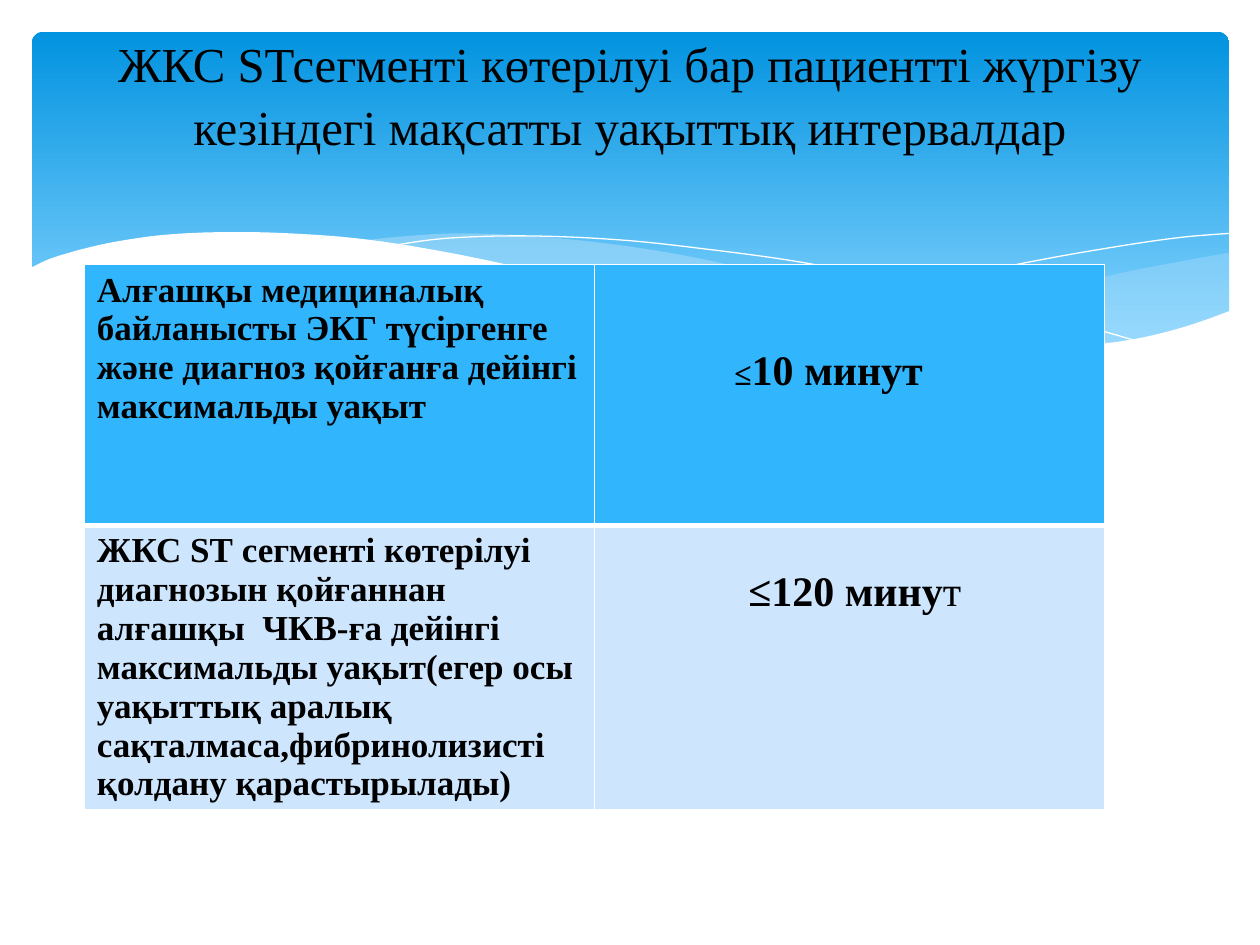
from lxml.etree import SubElement
from pptx import Presentation
from pptx.dml.color import RGBColor
from pptx.enum.shapes import MSO_SHAPE as Shape
from pptx.enum.text import MSO_ANCHOR as Anchor, PP_ALIGN as Align
from pptx.oxml.ns import qn
from pptx.util import Cm, Pt

COLORS = {"deep": "0293E0", "light": "83D3FE", "wave": "C6E7FC", "white": "FFFFFF",
          "text": "000000", "head": "31B6FD", "body": "CEE5FE"}
FONT = "Times New Roman"

WAVES = [
    (29, [[(9.51, 1.75), (8.81, 1.88), (8.36, 1.98), (7.54, 2.17), (7.04, 2.28), (6.36, 2.4)],
          [(6.36, 2.4), (7.07, 2.49), (7.67, 2.52), (8.19, 2.52), (8.64, 2.47), (9.03, 2.38),
           (9.51, 2.22)]]),
    (40, [[(8.68, 2.48), (7.82, 2.35), (6.81, 2.15), (6.04, 1.97), (5.3, 1.8), (4.64, 1.69),
           (3.95, 1.62), (3.36, 1.6), (2.88, 1.63), (2.61, 1.66)],
          [(2.61, 1.66), (3.37, 1.78), (4.24, 1.97), (5.05, 2.15), (5.76, 2.3), (6.4, 2.41),
           (6.97, 2.49), (7.48, 2.52), (8.03, 2.53), (8.42, 2.51), (8.68, 2.48)]]),
]
STRANDS = [
    [(2.84, 1.7), (3.28, 1.64), (3.91, 1.62), (4.64, 1.65), (5.31, 1.72), (6.11, 1.83),
     (7.02, 2.01), (7.7, 2.16), (8.44, 2.36), (8.82, 2.47)],
    [(5.88, 2.32), (6.7, 2.1), (7.51, 1.91), (8.11, 1.79), (8.7, 1.69), (9.13, 1.63),
     (9.5, 1.6)],
]
PAPER = [
    [(9.52, 2.21), (9.15, 2.34), (8.74, 2.44), (8.25, 2.5), (7.68, 2.52), (7.01, 2.47),
     (6.23, 2.37), (5.3, 2.2), (4.22, 1.95), (3.4, 1.77), (2.67, 1.65), (2.05, 1.6),
     (1.52, 1.59), (1.07, 1.61), (0.7, 1.66), (0.42, 1.72), (0.15, 1.8), (-0.02, 1.88)],
    [(-0.02, 3.04), (9.52, 3.04)],
]
TITLE = ("ЖКС SТсегменті көтерілуі бар пациентті жүргізу "
         "кезіндегі мақсатты уақыттық интервалдар")
ROWS = [
    {"height": 5.26, "fill": "head", "bottom": 3, "inset": (2.82, 1.68),
     "label": "Алғашқы медициналық байланысты ЭКГ түсіргенге және диагноз қойғанға "
              "дейінгі максимальды уақыт",
     "value": [("≤", 18, True), ("10 минут", 24, True)]},
    {"height": 5.74, "fill": "body", "bottom": 1, "inset": (3.1, 0.89),
     "label": "ЖКС SТ сегменті көтерілуі диагнозын қойғаннан алғашқы  ЧКВ-ға дейінгі "
              "максимальды уақыт(егер осы уақыттық аралық сақталмаса,фибринолизисті "
              "қолдану қарастырылады)",
     "value": [("≤120 мину", 24, True), ("т", 24, False)]},
]


def rgb(name):
    """Return the named colour."""
    return RGBColor.from_string(COLORS[name])


def paint(fill, name):
    """Give a fill one solid named colour."""
    fill.solid()
    fill.fore_color.rgb = rgb(name)


def add_run(p, text, size, bold):
    """Append a formatted run to a paragraph."""
    r = p.add_run()
    r.text = text
    r.font.name, r.font.size, r.font.bold = FONT, Pt(size), bold
    r.font.color.rgb = rgb("text")


def smooth(points, steps=6):
    """Return a Catmull-Rom curve through the points."""
    padded = [points[0], *points, points[-1]]
    curve = [points[0]]
    for a, b, c, d in zip(padded, padded[1:], padded[2:], padded[3:]):
        for t in (k / steps for k in range(1, steps + 1)):
            curve.append(tuple(
                q + t * (r - p + t * (2 * p - 5 * q + 4 * r - s + t * (3 * q - p - 3 * r + s))) / 2
                for p, q, r, s in zip(a, b, c, d)))
    return curve


def add_curve(s, box, edges, close):
    """Draw smooth edges as one outline on a grid 9.5 units wide."""
    left, top, width, _ = box
    unit = width / 9.5
    points = [(Cm(left + x * unit), Cm(top + y * unit))
              for edge in edges for x, y in smooth(edge)]
    builder = s.shapes.build_freeform(*points[0])
    builder.add_line_segments(points[1:], close=close)
    sp = builder.convert_to_shape()
    sp.shadow.inherit = False
    return sp


def add_banner(s, box):
    """Draw the gradient band with its waves."""
    band = s.shapes.add_shape(Shape.ROUNDED_RECTANGLE, *map(Cm, box))
    band.adjustments[0] = 0.034
    band.shadow.inherit = False
    band.line.fill.background()
    band.fill.gradient()
    band.fill.gradient_angle = 270
    for stop, name, position in zip(band.fill.gradient_stops, ("deep", "light"), (0, 0.9)):
        stop.color.rgb, stop.position = rgb(name), position
    for opacity, edges in WAVES:
        sp = add_curve(s, box, edges, True)
        paint(sp.fill, "wave")
        sp.line.fill.background()
        color = sp._element.spPr.find(qn("a:solidFill"))[0]
        SubElement(color, qn("a:alpha"), val=str(opacity * 1000))
    for strand in STRANDS:
        sp = add_curve(s, box, [strand], False)
        sp.fill.background()
        sp.line.color.rgb = rgb("white")
        sp.line.width = Pt(0)
    paper = add_curve(s, box, PAPER, True)
    paint(paper.fill, "white")
    paper.line.fill.background()


def add_title(s, box):
    """Write the centred title, growing upwards from the box bottom."""
    tf = s.shapes.add_textbox(*map(Cm, box)).text_frame
    tf.word_wrap = True
    tf.vertical_anchor = Anchor.BOTTOM
    tf.margin_bottom = Cm(0.2)
    p = tf.paragraphs[0]
    p.alignment = Align.CENTER
    p.line_spacing = 1.07
    add_run(p, TITLE, 27.9, False)


def style_cell(cell, row):
    """Set the fill and white borders of a cell."""
    tc_pr = cell._tc.get_or_add_tcPr()
    for side, width in zip("LRTB", (1, 1, 1, row["bottom"])):
        ln = SubElement(tc_pr, qn(f"a:ln{side}"), w=str(Pt(width)))
        SubElement(SubElement(ln, qn("a:solidFill")), qn("a:srgbClr"), val=COLORS["white"])
    paint(cell.fill, row["fill"])


def add_intervals(s, box):
    """Place the table of target time intervals."""
    table = s.shapes.add_table(len(ROWS), 2, *map(Cm, box)).table
    for column in table.columns:
        column.width = Cm(box[2] / 2)
    for i, row in enumerate(ROWS):
        table.rows[i].height = Cm(row["height"])
        label, value = table.cell(i, 0), table.cell(i, 1)
        value.margin_left, value.margin_top = map(Cm, row["inset"])
        for cell, runs in ((label, [(row["label"], 20, True)]), (value, row["value"])):
            style_cell(cell, row)
            for run in runs:
                add_run(cell.text_frame.paragraphs[0], *run)


def main():
    """Build and save the slide."""
    prs = Presentation()
    prs.slide_width, prs.slide_height = Cm(25.4), Cm(19.05)
    s = prs.slides.add_slide(prs.slide_layouts[6])
    add_banner(s, (0.64, 0.64, 24.14, 6.86))
    add_intervals(s, (1.7, 5.33, 20.57, 11))
    add_title(s, (1.27, 2.13, 22.86, 1.2))
    prs.save("out.pptx")


if __name__ == "__main__":
    main()
